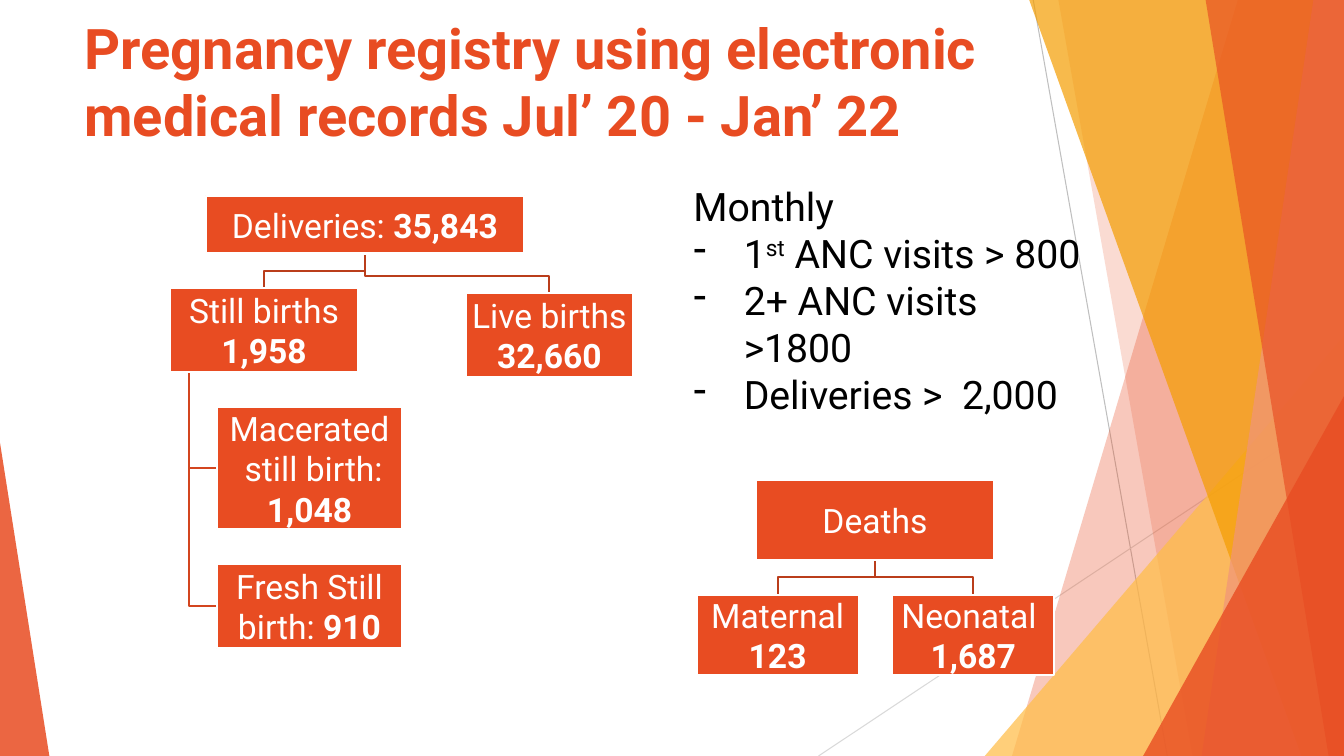
from collections import namedtuple

from lxml.etree import SubElement
from pptx import Presentation
from pptx.dml.color import RGBColor
from pptx.enum.shapes import MSO_CONNECTOR, MSO_SHAPE
from pptx.enum.text import MSO_ANCHOR, PP_ALIGN
from pptx.oxml.ns import qn
from pptx.util import Inches, Pt

ORANGE = RGBColor(0xE8, 0x4C, 0x22)
SALMON = RGBColor(0xF1, 0x94, 0x7A)
AMBER = RGBColor(0xF4, 0x9D, 0x00)
YELLOW = RGBColor(0xFF, 0xBD, 0x47)
BRANCH_BROWN = RGBColor(0xBA, 0x3D, 0x1B)
HANGING_BROWN = RGBColor(0xD3, 0x45, 0x1F)
GREY = RGBColor(0xBF, 0xBF, 0xBF)
LIGHT_GREY = RGBColor(0xD9, 0xD9, 0xD9)
WHITE = RGBColor(0xFF, 0xFF, 0xFF)
BLACK = RGBColor(0, 0, 0)

COLUMNS, ROWS = 133.33, 75
BEND_ROWS = 1.75  # height of a branch's bend above its child

Box = namedtuple("Box", "left top width height paragraphs")
Run = namedtuple("Run", "text bold raised", defaults=(False, False))


class GridSlide:
    """Places elements on a slide by columns and rows."""

    font = "Roboto"

    def __init__(self, deck):
        self.slide = deck.slides.add_slide(deck.slide_layouts[6])
        self.shapes = self.slide.shapes
        self.column = deck.slide_width / COLUMNS
        self.row = deck.slide_height / ROWS

    def point(self, column, row):
        return round(column * self.column), round(row * self.row)

    def frame(self, left, top, width, height):
        return *self.point(left, top), *self.point(width, height)

    def paint(self, shape, color, opacity=100):
        shape.shadow.inherit = False
        shape.fill.solid()
        shape.fill.fore_color.rgb = color
        shape.line.fill.background()
        if opacity < 100:
            tint = shape._element.spPr.find(qn("a:solidFill"))[0]
            SubElement(tint, qn("a:alpha"), val=str(opacity * 1000))

    def outline(self, points, closed):
        first, *rest = [self.point(*p) for p in points]
        builder = self.shapes.build_freeform(*first)
        builder.add_line_segments(rest, close=closed)
        return builder.convert_to_shape()

    def ray(self, start, end, color):
        line = self.shapes.add_connector(
            MSO_CONNECTOR.STRAIGHT, *self.point(*start), *self.point(*end))
        line.line.color.rgb = color
        line.line.width = Pt(0.75)
        SubElement(line._element.spPr, qn("a:effectLst"))

    def facet(self, top, bottom, color, opacity):
        """Fill from a slanted left edge to the right side of the slide."""
        corners = [(top, 0), (COLUMNS, 0), (COLUMNS, ROWS), (bottom, ROWS)]
        self.paint(self.outline(corners, True), color, opacity)

    def corner(self, left, top, width, apex, color, opacity):
        """Triangle standing on the bottom of the slide."""
        triangle = self.shapes.add_shape(
            MSO_SHAPE.ISOSCELES_TRIANGLE, *self.frame(left, top, width, ROWS - top))
        triangle.adjustments[0] = apex
        self.paint(triangle, color, opacity)

    def link(self, points, color):
        elbow = self.outline(points, False)
        elbow.shadow.inherit = False
        elbow.fill.background()
        elbow.line.color.rgb = color
        elbow.line.width = Pt(1.5)

    def branch(self, parent, child):
        """Link from the parent's bottom down to the child's top."""
        start = parent.left + parent.width / 2
        end = child.left + child.width / 2
        bend = child.top - BEND_ROWS
        self.link([(start, parent.top + parent.height), (start, bend),
                   (end, bend), (end, child.top)], BRANCH_BROWN)

    def hang(self, parent, child):
        """Link from near the parent's left corner to the child's left side."""
        stem = parent.left + parent.width / 10
        middle = child.top + child.height / 2
        self.link([(stem, parent.top + parent.height), (stem, middle),
                   (child.left, middle)], HANGING_BROWN)

    def fill_text(self, text_frame, paragraphs, size, color, align=PP_ALIGN.LEFT):
        text_frame.word_wrap = True
        for index, runs in enumerate(paragraphs):
            paragraph = text_frame.add_paragraph() if index else text_frame.paragraphs[0]
            paragraph.alignment = align
            for part in runs:
                run = paragraph.add_run()
                run.text = part.text
                run.font.name = self.font
                run.font.size = Pt(size)
                run.font.bold = part.bold
                run.font.color.rgb = color
                if part.raised:
                    run._r.get_or_add_rPr().set("baseline", "30000")

    def box(self, box):
        rectangle = self.shapes.add_shape(MSO_SHAPE.RECTANGLE, *self.frame(*box[:4]))
        self.paint(rectangle, ORANGE)
        rectangle.line.color.rgb = WHITE
        rectangle.line.width = Pt(1.5)
        text = rectangle.text_frame
        text.vertical_anchor = MSO_ANCHOR.MIDDLE
        text.margin_left = text.margin_right = Inches(0.02)
        text.margin_top = text.margin_bottom = Inches(0.02)
        self.fill_text(text, box.paragraphs, 24, WHITE, PP_ALIGN.CENTER)

    def text(self, place, paragraphs, size, color):
        text = self.shapes.add_textbox(*self.frame(*place)).text_frame
        self.fill_text(text, paragraphs, size, color)
        return text

    def dash(self, paragraph):
        properties = paragraph._p.get_or_add_pPr()
        properties.set("marL", str(Inches(0.5)))
        properties.set("indent", str(-Inches(0.5)))
        SubElement(properties, qn("a:buChar"), char="-")


def draw_backdrop(page):
    page.ray((102.5, 0), (115.8, ROWS), GREY)
    page.ray((COLUMNS, 40.3), (81.2, ROWS), LIGHT_GREY)
    page.facet(122.8, 100.4, ORANGE, 30)
    page.facet(105, 118.3, ORANGE, 20)
    page.corner(97.7, 33.3, 35.63, 1, YELLOW, 72)
    page.facet(102.1, 129.1, AMBER, 70)
    page.facet(130.3, 119.2, SALMON, 70)
    page.facet(119.6, 131.8, ORANGE, 65)
    page.corner(113.4, 39.3, 19.93, 1, ORANGE, 80)
    page.corner(0, 43.9, 4.9, 0, ORANGE, 85)


def draw_births(page):
    deliveries = Box(20.4, 19.4, 31.6, 5.75, [[Run("Deliveries: "), Run("35,843", True)]])
    still = Box(16.9, 28.6, 18.6, 8.3, [[Run("Still births")], [Run("1,958", True)]])
    live = Box(46.2, 29.1, 16.6, 8.3, [[Run("Live births")], [Run("32,660", True)]])
    macerated = Box(21.5, 40.4, 18.4, 12.1, [
        [Run("Macerated")], [Run(" still birth: "), Run("1,048", True)]])
    fresh = Box(21.5, 56, 18.4, 8.3, [[Run("Fresh Still birth: "), Run("910", True)]])
    page.branch(deliveries, live)
    for kind in (fresh, macerated):
        page.hang(still, kind)
    page.branch(deliveries, still)
    for box in (deliveries, still, macerated, fresh, live):
        page.box(box)


def draw_deaths(page):
    deaths = Box(75, 47.6, 23.6, 8, [[Run("Deaths")]])
    maternal = Box(69.1, 59, 16.1, 8, [[Run("Maternal")], [Run("123", True)]])
    neonatal = Box(88.5, 59, 16.1, 8, [[Run("Neonatal ")], [Run("1,687", True)]])
    for kind in (neonatal, maternal):
        page.branch(deaths, kind)
    for box in (deaths, maternal, neonatal):
        page.box(box)


def main():
    deck = Presentation()
    deck.slide_width, deck.slide_height = Inches(13.33), Inches(7.5)
    page = GridSlide(deck)
    draw_backdrop(page)
    page.text((7.4, 0.8, 109.2, 14.5), [[Run(
        "Pregnancy registry using electronic medical records Jul’ 20 - Jan’ 22", True)]],
        40, ORANGE)
    draw_births(page)
    draw_deaths(page)
    monthly = page.text((67.8, 17.6, 41.1, 19.9), [
        [Run("Monthly")],
        [Run("1"), Run("st", raised=True), Run(" ANC visits > 800")],
        [Run("2+ ANC visits >1800")],
        [Run("Deliveries >  2,000")],
    ], 28, BLACK)
    for figure in monthly.paragraphs[1:]:
        page.dash(figure)
    deck.save("out.pptx")


if __name__ == "__main__":
    main()
